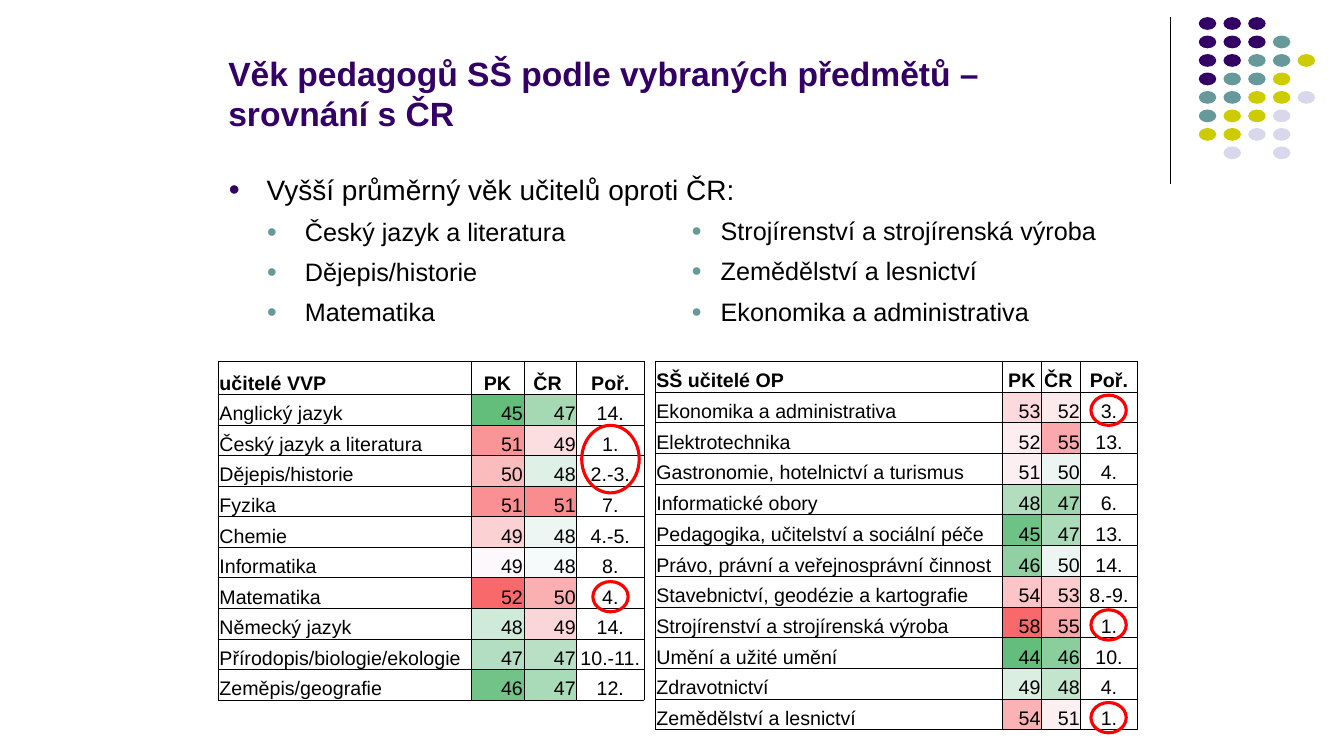
from lxml import etree
from pptx import Presentation
from pptx.dml.color import RGBColor
from pptx.enum.shapes import MSO_CONNECTOR, MSO_SHAPE
from pptx.enum.text import MSO_ANCHOR, PP_ALIGN
from pptx.oxml.ns import qn
from pptx.util import Inches, Pt

LEFT, CENTER, RIGHT = PP_ALIGN.LEFT, PP_ALIGN.CENTER, PP_ALIGN.RIGHT
TOP, BOTTOM = MSO_ANCHOR.TOP, MSO_ANCHOR.BOTTOM
OVAL, STRAIGHT = MSO_SHAPE.OVAL, MSO_CONNECTOR.STRAIGHT

COLOURS = {"purple": "330066", "teal": "669999", "olive": "CCCC00",
           "lilac": "D8D8EC", "black": "000000", "red": "FF0000"}
HEAT = {
    "Anglický jazyk": "63BE7B A5D9B4",
    "Český jazyk a literatura": "FA9597 FCDEE1",
    "Dějepis/historie": "FBBCBE DFF0E6",
    "Fyzika": "FA9093 F98C8E",
    "Chemie": "FBD1D4 EDF6F2",
    "Informatika": "FCF8FB F7FAFA",
    "Matematika": "F8696B FAAFB1",
    "Německý jazyk": "D0EAD9 FBD6D8",
    "Přírodopis/biologie/ekologie": "B4DEC1 B9E0C5",
    "Zeměpis/geografie": "71C387 AADBB8",
    "Ekonomika a administrativa": "FCD9DC FCE9EC",
    "Elektrotechnika": "FCEDF0 FAA8AB",
    "Gastronomie, hotelnictví a turismus": "FCEFF2 ECF5F1",
    "Informatické obory": "B2DEBF 9FD6AE",
    "Pedagogika, učitelství a sociální péče": "6FC285 ABDBB9",
    "Právo, právní a veřejnosprávní činnost": "90D0A2 ECF5F1",
    "Stavebnictví, geodézie a kartografie": "FBC5C7 FBCBCD",
    "Strojírenství a strojírenská výroba": "F8696B FAA6A9",
    "Umění a užité umění": "63BE7B 8BCE9E",
    "Zdravotnictví": "DBEEE2 C3E5CE",
    "Zemědělství a lesnictví": "FAB2B5 FCEFF2",
}
GENERAL_SUBJECTS = [
    ("učitelé VVP", "PK", "ČR ", "Poř."),
    ("Anglický jazyk", 45, 47, "14."),
    ("Český jazyk a literatura", 51, 49, "1."),
    ("Dějepis/historie", 50, 48, "2.-3."),
    ("Fyzika", 51, 51, "7."),
    ("Chemie", 49, 48, "4.-5."),
    ("Informatika", 49, 48, "8."),
    ("Matematika", 52, 50, "4."),
    ("Německý jazyk", 48, 49, "14."),
    ("Přírodopis/biologie/ekologie", 47, 47, "10.-11."),
    ("Zeměpis/geografie", 46, 47, "12."),
]
VOCATIONAL_SUBJECTS = [
    ("SŠ učitelé OP", "PK", "ČR ", "Poř."),
    ("Ekonomika a administrativa", 53, 52, "3."),
    ("Elektrotechnika", 52, 55, "13."),
    ("Gastronomie, hotelnictví a turismus", 51, 50, "4."),
    ("Informatické obory", 48, 47, "6."),
    ("Pedagogika, učitelství a sociální péče", 45, 47, "13."),
    ("Právo, právní a veřejnosprávní činnost", 46, 50, "14."),
    ("Stavebnictví, geodézie a kartografie", 54, 53, "8.-9."),
    ("Strojírenství a strojírenská výroba", 58, 55, "1."),
    ("Umění a užité umění", 44, 46, "10."),
    ("Zdravotnictví", 49, 48, "4."),
    ("Zemědělství a lesnictví", 54, 51, "1."),
]
DOT_ROWS = ["PPP", "PPPT", "PPTTO", "PTTO", "TTOOL", "TOOL", "OOLL", " L L"]
DOT_COLOURS = {"P": "purple", "T": "teal", "O": "olive", "L": "lilac"}
RANK_RINGS = [(69.24, 50.64, 6.84, 8.04), (70.56, 69.24, 4.2, 3.6),
              (129.84, 72.6, 4.2, 3.6), (129.84, 83.64, 4.2, 3.6),
              (129.84, 47.04, 4.2, 3.6)]


def grid(*cells):
    """Convert grid columns or rows, twelve to the inch, to lengths."""
    return [Inches(cell / 12) for cell in cells]


def write(paragraph, text, *, size=14, colour="black", bold=False, align=LEFT,
          before=0, spacing=1.0, indent=None, hang=0, bullet=None):
    """Fill a paragraph with formatted text and an optional bullet."""
    run = paragraph.add_run()
    run.text = text
    run.font.name, run.font.size, run.font.bold = "Arial", Pt(size), bold
    run.font.color.rgb = RGBColor.from_string(COLOURS[colour])
    paragraph.alignment = align
    paragraph.space_before, paragraph.line_spacing = Pt(before), spacing
    if bullet:
        properties = paragraph._p.get_or_add_pPr()
        properties.set("marL", str(Inches(indent)))
        properties.set("indent", str(-Inches(hang)))
        bullet_colour = etree.SubElement(properties, qn("a:buClr"))
        etree.SubElement(bullet_colour, qn("a:srgbClr"), val=COLOURS[bullet])
        etree.SubElement(properties, qn("a:buSzPct"), val="70000")
        etree.SubElement(properties, qn("a:buFont"), typeface="Arial")
        etree.SubElement(properties, qn("a:buChar"), char="●")


class SlideBuilder:
    """Hold the current slide and draw its elements in the shared style."""

    def __init__(self, slide):
        """Keep the slide to draw on."""
        self.shapes = slide.shapes

    def text(self, place, lines, anchor=TOP):
        """Add a wrapped text box from pairs of text and format."""
        frame = self.shapes.add_textbox(*grid(*place)).text_frame
        frame.word_wrap, frame.vertical_anchor = True, anchor
        for index, (line, style) in enumerate(lines):
            paragraph = frame.add_paragraph() if index else frame.paragraphs[0]
            write(paragraph, line, **style)

    def oval(self, place, fill=None, outline=None):
        """Add a filled dot or an outlined ring."""
        oval = self.shapes.add_shape(OVAL, *grid(*place))
        oval.shadow.inherit = False
        if fill:
            oval.fill.solid()
            oval.fill.fore_color.rgb = RGBColor.from_string(COLOURS[fill])
        else:
            oval.fill.background()
        if outline:
            oval.line.color.rgb = RGBColor.from_string(COLOURS[outline])
            oval.line.width = Pt(2.25)
        else:
            oval.line.fill.background()

    def rule(self, *ends):
        """Add a thin straight line."""
        rule = self.shapes.add_connector(STRAIGHT, *grid(*ends))
        rule.line.color.rgb = RGBColor.from_string(COLOURS["black"])
        rule.line.width = Pt(0.75)
        etree.SubElement(rule._element.spPr, qn("a:effectLst"))

    def border(self, cell):
        """Draw all four borders of a table cell."""
        properties = cell._tc.get_or_add_tcPr()
        for side in ("lnL", "lnR", "lnT", "lnB"):
            edge = etree.SubElement(properties, qn(f"a:{side}"), w=str(Pt(0.5)))
            paint = etree.SubElement(edge, qn("a:solidFill"))
            etree.SubElement(paint, qn("a:srgbClr"), val=COLOURS["black"])

    def age_table(self, left, top, widths, heights, records):
        """Add a table of ages shaded by value."""
        table = self.shapes.add_table(len(records), len(widths), *grid(
            left, top, sum(widths), sum(heights))).table
        table.first_row = table.horz_banding = False
        for column, width in zip(table.columns, grid(*widths)):
            column.width = width
        for row, height, record in zip(table.rows, grid(*heights), records):
            row.height = height
            heading = record is records[0]
            age_align = CENTER if heading else RIGHT
            aligns = (LEFT, age_align, age_align, CENTER)
            fills = (None, *HEAT.get(record[0], " ").split(" "), None)
            for cell, value, align, fill in zip(row.cells, record, aligns, fills):
                cell.margin_left = cell.margin_right = cell.margin_top = Inches(0.01)
                cell.margin_bottom = 0
                cell.vertical_anchor = BOTTOM
                write(cell.text_frame.paragraphs[0], str(value),
                      bold=heading, align=align)
                self.border(cell)
                if fill:
                    cell.fill.solid()
                    cell.fill.fore_color.rgb = RGBColor.from_string(fill)
                else:
                    cell.fill.background()


def main():
    """Build and save the slide."""
    deck = Presentation()
    deck.slide_width, deck.slide_height = Inches(13.33), Inches(7.5)
    page = SlideBuilder(deck.slides.add_slide(deck.slide_layouts[6]))

    page.rule(139.32, 2.04, 139.32, 21.96)
    for row, dots in enumerate(DOT_ROWS):
        for column, dot in enumerate(dots):
            if dot in DOT_COLOURS:
                page.oval((142.68 + 2.94 * column, 2.04 + 2.2 * row, 2.08, 1.52),
                          fill=DOT_COLOURS[dot])

    page.text((26, 0, 94.44, 16.5), [
        ("Věk pedagogů SŠ podle vybraných předmětů – srovnání s ČR",
         dict(size=24, colour="purple", bold=True))], anchor=BOTTOM)
    lead = dict(size=20, before=12, indent=0.38, hang=0.38, bullet="purple")
    item = dict(size=18, before=4, spacing=1.15, bullet="teal")
    left_item = dict(item, indent=0.76, hang=0.38)
    right_item = dict(item, indent=0.57, hang=0.29)
    page.text((26, 19.92, 65.64, 24), [
        ("Vyšší průměrný věk učitelů oproti ČR:", lead),
        ("Český jazyk a literatura", left_item),
        ("Dějepis/historie", left_item),
        ("Matematika", left_item)])

    page.age_table(26, 43, (30.06, 6.3, 6.3, 7.98), [3.96] + [3.64] * 10,
                   GENERAL_SUBJECTS)
    page.age_table(78, 43, (41.28, 4.68, 4.68, 6.72), [3.66] * 12,
                   VOCATIONAL_SUBJECTS)
    page.text((77.76, 24.48, 59.64, 19.44), [
        ("Strojírenství a strojírenská výroba", right_item),
        ("Zemědělství a lesnictví", right_item),
        ("Ekonomika a administrativa", right_item)])
    for ring in RANK_RINGS:
        page.oval(ring, outline="red")
    deck.save("out.pptx")


if __name__ == "__main__":
    main()
